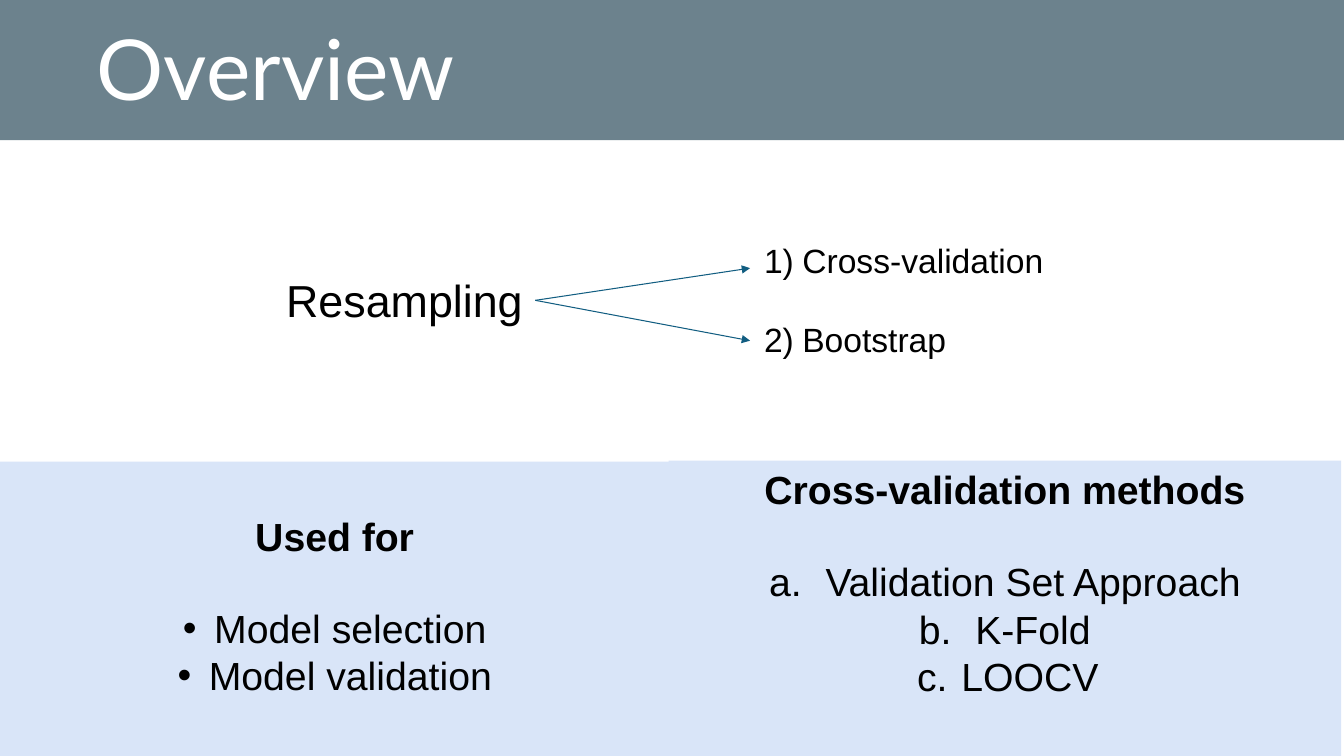
from lxml import etree
from pptx import Presentation
from pptx import util as u
from pptx.dml.color import RGBColor
from pptx.enum import shapes, text
from pptx.oxml import ns

WIDTH, HEIGHT = u.Inches(13.33), u.Inches(7.5)
BLACK, WHITE, SLATE, PALE, TEAL = "000000", "FFFFFF", "0B3041", "D9E5F8", "115D81"
LEFT, CENTER = text.PP_ALIGN.LEFT, text.PP_ALIGN.CENTER
NUMBER = ("buAutoNum", {"type": "arabicParenR"})
LETTER = ("buAutoNum", {"type": "alphaLcPeriod"})
DOT = ("buChar", {"char": "•"})
HEADING = {"bold": True}

# Boxes are left, top, width, height in percent of the slide.
BAND = (-4.43, -1.6, 108.4, 20.13)
TEXTS = [
    {"box": (0, 0, 41.04, 16.4), "size": 60, "font": "Lato", "color": WHITE,
     "align": CENTER, "anchor": text.MSO_ANCHOR.BOTTOM, "spacing": 0.9,
     "lines": [("Overview", {})]},
    {"box": (56.11, 31.07, 22.5, 17.47), "size": 24,
     "lines": [("Cross-validation", {"bullet": NUMBER, "indent": (0.38, -0.38)}),
               ("Bootstrap", {"bullet": NUMBER, "indent": (0.38, -0.38), "gap": True})]},
    {"box": (20.55, 35.47, 19.28, 8.53), "size": 32, "lines": [("Resampling", {})]},
    {"box": (-0.23, 61.07, 50.26, 39.07), "size": 28, "fill": PALE, "align": CENTER,
     "top_inset": 0.5,
     "lines": [("Used for", HEADING),
               ("Model selection", {"bullet": DOT, "indent": (0.31, -0.31), "gap": True}),
               ("Model validation", {"bullet": DOT, "indent": (0.31, -0.31)})]},
    {"box": (49.74, 60.93, 50.04, 39.07), "size": 28, "fill": PALE, "align": CENTER,
     "lines": [("Cross-validation methods", HEADING),
               ("Validation Set Approach", {"bullet": LETTER, "indent": (0.56, -0.56), "gap": True}),
               ("K-Fold", {"bullet": LETTER, "indent": (0.56, -0.56)}),
               ("LOOCV", {"bullet": LETTER, "indent": (0.5, -0.44)})]},
]
ARROW_START = (39.83, 39.73)
ARROW_ENDS = [(55.81, 35.47), (55.81, 45.07)]
LINE_HEIGHT = 1.15


def color(value):
    return RGBColor.from_string(value)


def place(*shares):
    sides = (WIDTH, HEIGHT) * 2
    return [round(share * side / 100) for share, side in zip(shares, sides)]


def add_xml(parent, tag, attributes=None):
    return etree.SubElement(parent, ns.qn("a:" + tag), attributes or {})


def add_block(slide, box, fill):
    shape = slide.shapes.add_shape(shapes.MSO_SHAPE.RECTANGLE, *place(*box))
    shape.shadow.inherit = False
    shape.fill.solid()
    shape.fill.fore_color.rgb = color(fill)
    shape.line.fill.background()
    return shape


def add_bullet(paragraph, bullet, indent):
    properties = paragraph._p.get_or_add_pPr()
    for name, inches in zip(("marL", "indent"), indent):
        properties.set(name, str(u.Inches(inches)))
    add_xml(add_xml(properties, "buClr"), "srgbClr", {"val": BLACK})
    add_xml(properties, "buFont", {"typeface": "Arial"})
    add_xml(properties, *bullet)


def add_text(slide, item):
    if "fill" in item:
        shape = add_block(slide, item["box"], item["fill"])
    else:
        shape = slide.shapes.add_textbox(*place(*item["box"]))
    frame = shape.text_frame
    frame_format = {
        "word_wrap": True,
        "vertical_anchor": item.get("anchor", text.MSO_ANCHOR.TOP),
        "margin_left": u.Inches(0.1), "margin_right": u.Inches(0.1),
        "margin_top": u.Inches(item.get("top_inset", 0.05)),
        "margin_bottom": u.Inches(0.05),
    }
    for name, value in frame_format.items():
        setattr(frame, name, value)
    for index, (wording, style) in enumerate(item["lines"]):
        paragraph = frame.add_paragraph() if index else frame.paragraphs[0]
        paragraph.alignment = item.get("align", LEFT)
        if "spacing" in item:
            paragraph.line_spacing = item["spacing"]
        if style.get("gap"):
            paragraph.space_before = u.Pt(item["size"] * LINE_HEIGHT)
        if "bullet" in style:
            add_bullet(paragraph, style["bullet"], style["indent"])
        run = paragraph.add_run()
        run.text = wording
        font_format = {"name": item.get("font", "Arial"), "size": u.Pt(item["size"]),
                       "bold": style.get("bold", False)}
        for name, value in font_format.items():
            setattr(run.font, name, value)
        run.font.color.rgb = color(item.get("color", BLACK))


def add_arrow(slide, end):
    arrow = slide.shapes.add_connector(
        shapes.MSO_CONNECTOR.STRAIGHT, *place(*ARROW_START, *end))
    arrow.line.color.rgb = color(TEAL)
    arrow.line.width = u.Pt(0.75)
    add_xml(arrow.line._get_or_add_ln(), "tailEnd", {"type": "triangle"})
    add_xml(arrow._element.spPr, "effectLst")


def main():
    presentation = Presentation()
    presentation.slide_width, presentation.slide_height = WIDTH, HEIGHT
    slide = presentation.slides.add_slide(presentation.slide_layouts[6])
    band = add_block(slide, BAND, SLATE)
    band_color = band._element.spPr.find(".//" + ns.qn("a:srgbClr"))
    add_xml(band_color, "alpha", {"val": "60000"})
    for item in TEXTS:
        add_text(slide, item)
    for end in ARROW_ENDS:
        add_arrow(slide, end)
    presentation.save("out.pptx")


if __name__ == "__main__":
    main()
